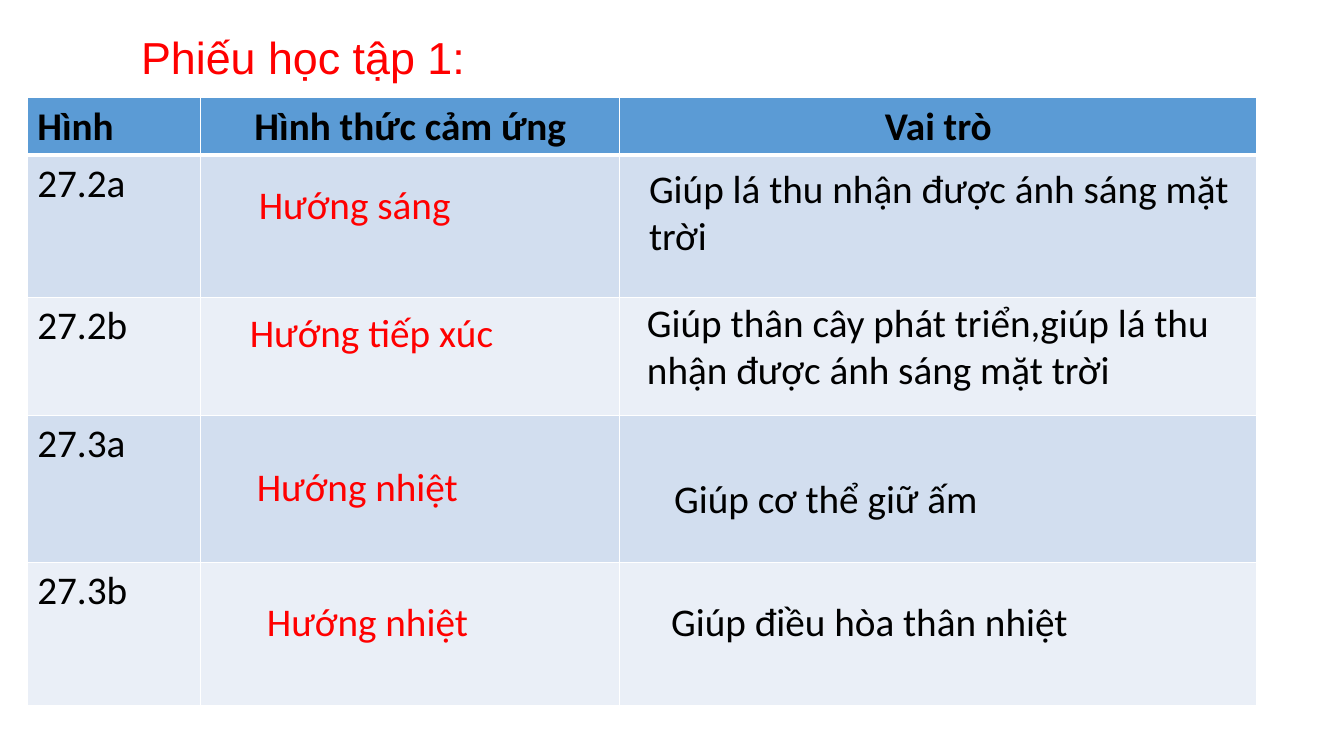
from pptx import Presentation
from pptx.dml.color import RGBColor
from pptx.enum.text import MSO_ANCHOR as Anchor, MSO_AUTO_SIZE as AutoSize, PP_ALIGN as Align
from pptx.oxml import parse_xml
from pptx.oxml.ns import nsdecls
from pptx.util import Inches, Pt

RED, BLACK, WHITE = "FF0000", "000000", "FFFFFF"
HEADER_FILL, BAND_FILLS = "5B9BD5", ("D2DEEF", "EAEFF7")


def color(hex_code):
    return RGBColor.from_string(hex_code)


class Worksheet:
    """Slide on a grid of 40 columns by 30 rows."""

    def __init__(self, deck):
        self.slide = deck.slides.add_slide(deck.slide_layouts[5])
        self.column = deck.slide_width / 40
        self.row = deck.slide_height / 30

    def area(self, left, top, width, height):
        return (round(left * self.column), round(top * self.row),
                round(width * self.column), round(height * self.row))

    def set_text(self, frame, text, hex_code=BLACK, size=28, name="Calibri",
                 bold=False, align=Align.LEFT):
        para = frame.paragraphs[0]
        para.text = text
        para.alignment = align
        font = para.font
        font.name, font.size, font.bold = name, Pt(size), bold
        font.color.rgb = color(hex_code)

    def title(self, text, *place):
        box = self.slide.shapes.title
        box.left, box.top, box.width, box.height = self.area(*place)
        frame = box.text_frame
        frame.word_wrap, frame.auto_size = False, AutoSize.SHAPE_TO_FIT_TEXT
        frame.vertical_anchor = Anchor.MIDDLE
        self.set_text(frame, text, RED, 32, "Arial")

    def answer(self, text, hex_code, *place):
        frame = self.slide.shapes.add_textbox(*self.area(*place)).text_frame
        frame.word_wrap, frame.auto_size = True, AutoSize.SHAPE_TO_FIT_TEXT
        self.set_text(frame, text, hex_code)

    def borders(self, cell, row_index):
        widths = {"L": 1, "R": 1, "T": 3 if row_index == 1 else 1,
                  "B": 3 if row_index == 0 else 1}
        for side, points in widths.items():
            cell._tc.get_or_add_tcPr().append(parse_xml(
                f'<a:ln{side} {nsdecls("a")} w="{Pt(points)}"><a:solidFill>'
                f'<a:srgbClr val="{WHITE}"/></a:solidFill></a:ln{side}>'))

    def table(self, headers, labels, left, top, widths, heights):
        place = self.area(left, top, sum(widths), sum(heights))
        table = self.slide.shapes.add_table(len(heights), len(widths), *place).table
        for column, width in zip(table.columns, widths):
            column.width = round(width * self.column)
        for row, height in zip(table.rows, heights):
            row.height = round(height * self.row)
        contents = [headers] + [(label, "", "") for label in labels]
        for r, texts in enumerate(contents):
            for c, text in enumerate(texts):
                cell = table.cell(r, c)
                self.borders(cell, r)
                cell.fill.solid()
                cell.fill.fore_color.rgb = color(BAND_FILLS[(r - 1) % 2] if r else HEADER_FILL)
                centred = r == 0 and c > 0
                self.set_text(cell.text_frame, text, bold=r == 0,
                              align=Align.CENTER if centred else Align.LEFT)


def main():
    deck = Presentation()
    deck.slide_width, deck.slide_height = Inches(13.33), Inches(7.5)
    sheet = Worksheet(deck)

    # Heading and table
    sheet.title("Phiếu học tập 1:", 3.9, 0.96, 10.32, 2.56)
    sheet.table(("Hình", "Hình thức cảm ứng", "Vai trò"),
                ("27.2a", "27.2b", "27.3a", "27.3b"), 0.81, 3.88,
                (5.16, 12.48, 18.96), (2.28, 5.64, 4.68, 5.84, 5.68))

    # Kinds of response
    for text, left, top, width in (
            ("Hướng sáng", 7.41, 6.96, 15.45),
            ("Hướng tiếp xúc", 7.14, 12.04, 15.24),
            ("Hướng nhiệt", 7.35, 18.16, 12.36),
            ("Hướng nhiệt", 7.65, 23.52, 10.17)):
        sheet.answer(text, RED, left, top, width, 2.28)

    # Roles
    for text, left, top, width, height in (
            ("Giúp lá thu nhận được ánh sáng mặt trời", 19.02, 6.32, 17.85, 4.16),
            ("Giúp thân cây phát triển,giúp lá thu nhận được ánh sáng mặt trời",
             18.96, 11.64, 17.85, 4.16),
            ("Giúp cơ thể giữ ấm", 19.77, 18.64, 17.13, 2.28),
            ("Giúp điều hòa thân nhiệt", 19.68, 23.52, 15.45, 2.28)):
        sheet.answer(text, BLACK, left, top, width, height)

    deck.save("out.pptx")


if __name__ == "__main__":
    main()
